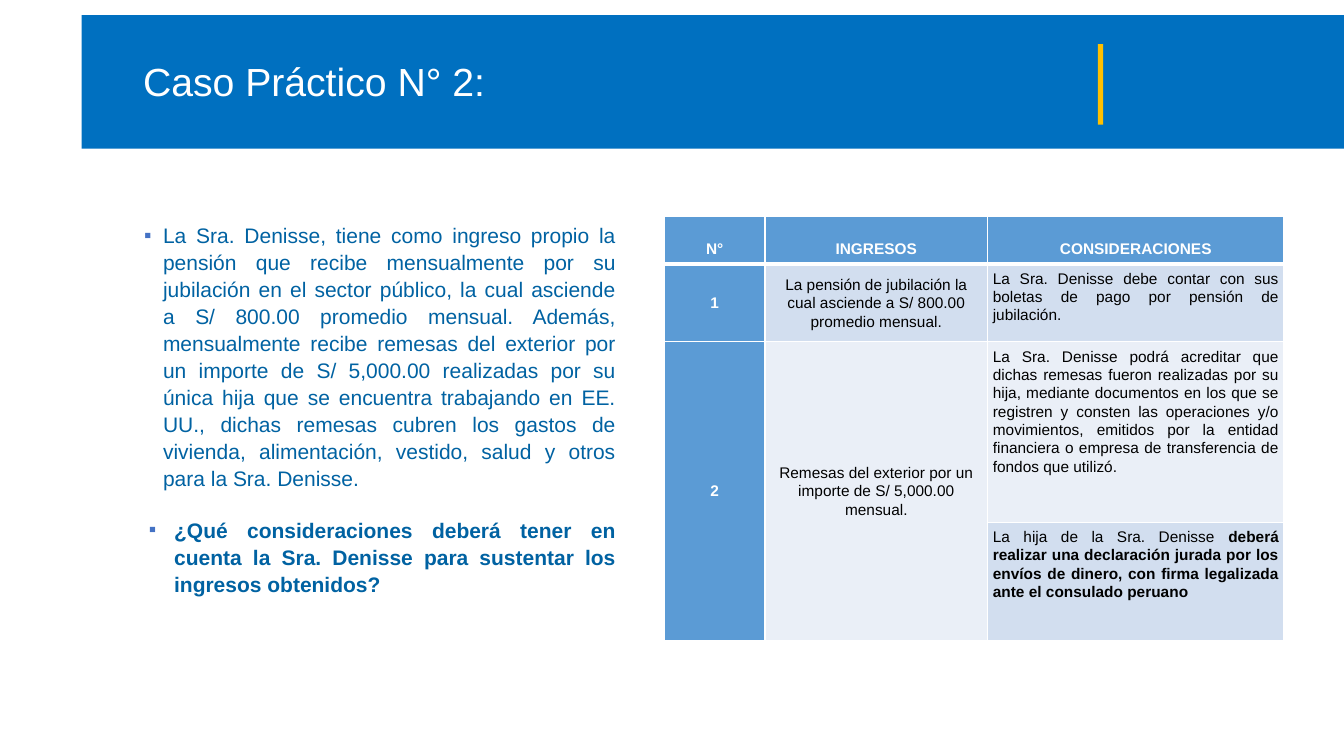
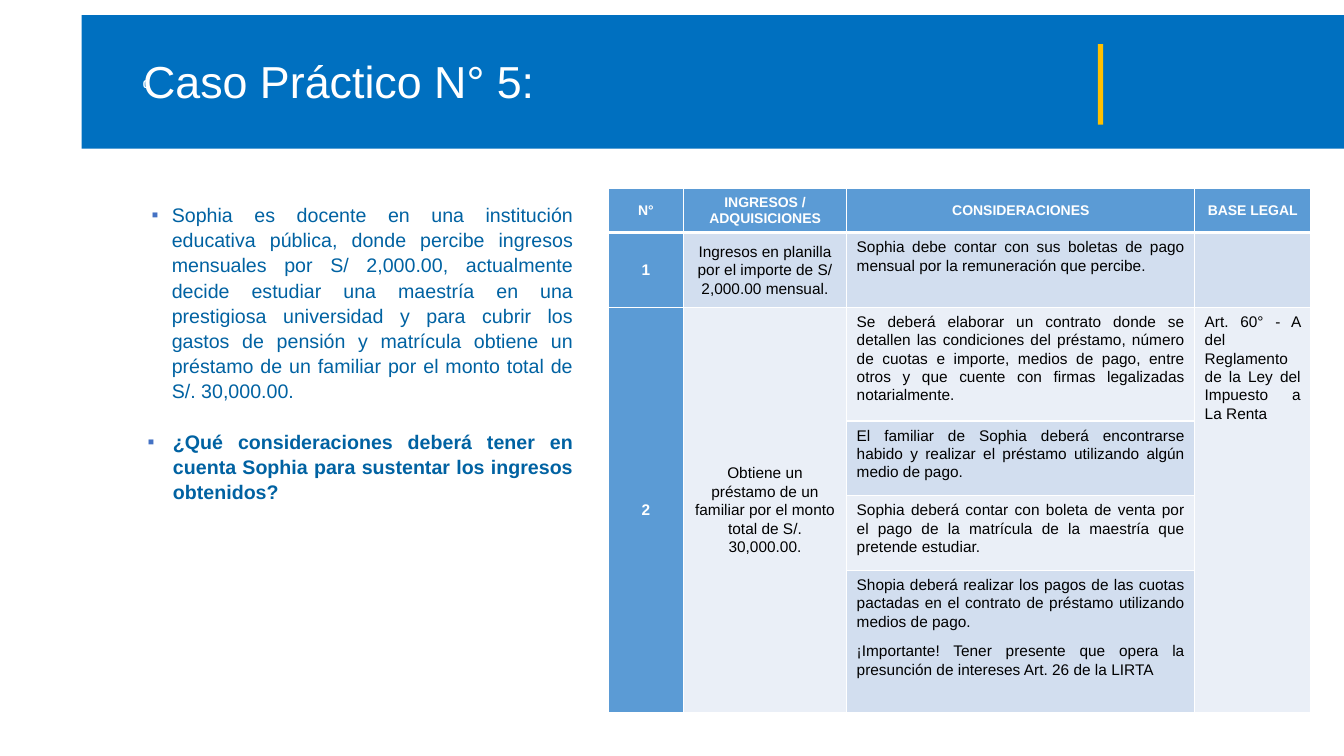
from lxml import etree
from pptx import Presentation
from pptx.dml.color import RGBColor
from pptx.enum.shapes import MSO_SHAPE
from pptx.enum.text import MSO_ANCHOR, PP_ALIGN
from pptx.oxml.ns import qn
from pptx.util import Cm, Pt

RECTANGLE = MSO_SHAPE.RECTANGLE
MIDDLE, TOP = MSO_ANCHOR.MIDDLE, MSO_ANCHOR.TOP
LEFT, CENTER, JUSTIFY = PP_ALIGN.LEFT, PP_ALIGN.CENTER, PP_ALIGN.JUSTIFY

WHITE = RGBColor(0xFF, 0xFF, 0xFF)
BLACK = RGBColor(0, 0, 0)
BAND_BLUE = RGBColor(0x00, 0x70, 0xC0)
ACCENT_YELLOW = RGBColor(0xFF, 0xC0, 0x00)
BODY_BLUE = RGBColor(0x00, 0x62, 0xA2)
BULLET_BLUE = RGBColor(0x44, 0x72, 0xC4)
HEADER_BLUE = RGBColor(0x5B, 0x9B, 0xD5)
ROW_FILLS = (RGBColor(0xEA, 0xEF, 0xF7), RGBColor(0xD2, 0xDE, 0xEF))

FONT = "Arial"
SLIDE_WIDTH, SLIDE_HEIGHT = Cm(33.87), Cm(19.05)
TITLE_BOX = (Cm(3.35), Cm(0.91), Cm(15.49), Cm(2.41))
LINE_SPACING = 1.07


def format_run(run, size, color, bold=False):
    run.font.name = FONT
    run.font.size = Pt(size)
    run.font.bold = bold
    run.font.color.rgb = color


def add_to_layout(layout, slide, box, color):
    """Draw a plain rectangle and move it behind the layout's placeholders."""
    shape = slide.shapes.add_shape(RECTANGLE, *box)
    shape.shadow.inherit = False
    shape.fill.solid()
    shape.fill.fore_color.rgb = color
    shape.line.fill.background()
    tree = layout.shapes.element
    tree.insert(len(tree) - len(layout.placeholders), shape.element)


def add_band(layout, slide):
    left, top = Cm(2.06), Cm(0.38)
    add_to_layout(layout, slide, (left, top, SLIDE_WIDTH - left, Cm(3.37)), BAND_BLUE)
    add_to_layout(layout, slide,
                  (left + Cm(25.61), top + Cm(0.73), Cm(0.13), Cm(2.03)), ACCENT_YELLOW)


def set_title(slide, text, size):
    title = slide.shapes.title
    title.left, title.top, title.width, title.height = TITLE_BOX
    frame = title.text_frame
    frame.text = text
    frame.vertical_anchor = MIDDLE
    paragraph = frame.paragraphs[0]
    paragraph.alignment = LEFT
    paragraph.line_spacing = 0.9
    format_run(paragraph.runs[0], size, WHITE)


def add_small_mark(slide, text):
    box = slide.shapes.add_textbox(*TITLE_BOX)
    frame = box.text_frame
    frame.word_wrap = True
    frame.vertical_anchor = MIDDLE
    frame.text = text
    format_run(frame.paragraphs[0].runs[0], 8, WHITE, True)


def add_bullet(paragraph, margin, hanging):
    properties = paragraph._p.get_or_add_pPr()
    properties.set("marL", str(margin))
    properties.set("indent", str(-hanging))
    color = etree.SubElement(properties, qn("a:buClr"))
    etree.SubElement(color, qn("a:srgbClr"), val=str(BULLET_BLUE))
    etree.SubElement(properties, qn("a:buFont"), typeface=FONT)
    etree.SubElement(properties, qn("a:buChar"), char="▪")


def add_case(slide, box, size, story, question, story_indent):
    """Add the case text and its bold question as two bulleted paragraphs."""
    frame = slide.shapes.add_textbox(*box).text_frame
    frame.word_wrap = True
    frame.text = f"{story}\n{question}"
    indents = (story_indent, (Cm(1.27), Cm(0.64)))
    for index, paragraph in enumerate(frame.paragraphs):
        add_bullet(paragraph, *indents[index])
        paragraph.alignment = JUSTIFY
        paragraph.line_spacing = LINE_SPACING
        paragraph.space_before = Pt(10 * index)
        paragraph.space_after = Pt(8)
        format_run(paragraph.runs[0], size, BODY_BLUE, bold=index == 1)


def set_borders(cell, row):
    """Draw white cell borders, heavier between the header and the first row."""
    properties = cell._tc.get_or_add_tcPr()
    widths = {"lnL": 1, "lnR": 1, "lnT": 3 if row == 1 else 1, "lnB": 3 if row == 0 else 1}
    for side, width in widths.items():
        line = etree.SubElement(properties, qn(f"a:{side}"), w=str(Pt(width)))
        fill = etree.SubElement(line, qn("a:solidFill"))
        etree.SubElement(fill, qn("a:srgbClr"), val=str(WHITE))


def fill_cell(cell, text, row, column, header_size, header_spacing):
    """Write the text, where ** marks the start and end of bold words."""
    is_header = row == 0 or column == 0
    is_centered = row == 0 or column < 2
    cell.fill.solid()
    cell.fill.fore_color.rgb = HEADER_BLUE if is_header else ROW_FILLS[row % 2]
    cell.vertical_anchor = MIDDLE if is_centered else TOP
    frame = cell.text_frame
    frame.text = text.replace("**", "")
    for paragraph, line in zip(frame.paragraphs, text.split("\n")):
        paragraph.alignment = CENTER if is_centered else JUSTIFY
        paragraph.line_spacing = LINE_SPACING if row else header_spacing
        paragraph.space_after = Pt(8)
        pieces = line.split("**")
        if len(pieces) > 1:
            paragraph.text = pieces[0]
            for piece in filter(None, pieces[1:]):
                paragraph.add_run().text = piece
        for index, run in enumerate(paragraph.runs):
            format_run(run, 11 if row else header_size, WHITE if is_header else BLACK,
                       is_header or index % 2 == 1)


def add_considerations(slide, left, top, widths, heights, rows, side_margin,
                       header_size, header_spacing):
    """Add the table; a None entry joins its cell to the one above."""
    table = slide.shapes.add_table(len(rows), len(widths), left, top,
                                   Cm(sum(widths)), Cm(sum(heights))).table
    table.first_row = table.horz_banding = False
    for column, width in zip(table.columns, widths):
        column.width = Cm(width)
    for row, height in zip(table.rows, heights):
        row.height = Cm(height)
    for row, texts in enumerate(rows):
        for column, text in enumerate(texts):
            cell = table.cell(row, column)
            cell.margin_left = cell.margin_right = side_margin
            cell.margin_top = cell.margin_bottom = Cm(0.13)
            set_borders(cell, row)
            if text is not None:
                fill_cell(cell, text, row, column, header_size, header_spacing)
    for column in range(len(widths)):
        if rows[-1][column] is None:
            table.cell(2, column).merge(table.cell(len(rows) - 1, column))


def build_pension_case(slide):
    set_title(slide, "Caso Práctico N° 2:", 28)
    add_case(
        slide, (Cm(2.87), Cm(5.44), Cm(12.9), Cm(11.43)), 15,
        "La Sra. Denisse, tiene como ingreso propio la pensión que recibe mensualmente por su "
        "jubilación en el sector público, la cual asciende a S/ 800.00 promedio mensual. Además, "
        "mensualmente recibe remesas del exterior por un importe de S/ 5,000.00 realizadas por su "
        "única hija que se encuentra trabajando en EE. UU., dichas remesas cubren los gastos de "
        "vivienda, alimentación, vestido, salud y otros para la Sra. Denisse.",
        "¿Qué consideraciones deberá tener en cuenta la Sra. Denisse para sustentar los "
        "ingresos obtenidos?",
        (Cm(0.99), Cm(0.48)))
    rows = [
        ("N°", "INGRESOS", "CONSIDERACIONES"),
        ("1", "La pensión de jubilación la cual asciende a S/ 800.00 promedio mensual.",
         "La Sra. Denisse debe contar con sus boletas de pago por pensión de jubilación."),
        ("2", "Remesas del exterior por un importe de S/ 5,000.00 mensual.",
         "La Sra. Denisse podrá acreditar que dichas remesas fueron realizadas por su hija, "
         "mediante documentos en los que se registren y consten las operaciones y/o movimientos, "
         "emitidos por la entidad financiera o empresa de transferencia de fondos que utilizó."),
        (None, None,
         "La hija de la Sra. Denisse **deberá realizar una declaración jurada por los envíos de "
         "dinero, con firma legalizada ante el consulado peruano**"),
    ]
    add_considerations(slide, Cm(16.74), Cm(5.46), (2.54, 5.61, 7.47),
                       (1.12, 1.96, 4.55, 2.97), rows, Cm(0.13), 11, 2.0)


def build_loan_case(slide):
    add_small_mark(slide, "0")
    set_title(slide, "Caso Práctico N° 5:", 32)
    add_case(
        slide, (Cm(2.84), Cm(4.95), Cm(11.86), Cm(11.73)), 14,
        "Sophia es docente en una institución educativa pública, donde percibe ingresos mensuales "
        "por S/ 2,000.00, actualmente decide estudiar una maestría en una prestigiosa universidad "
        "y para cubrir los gastos de pensión y matrícula obtiene un préstamo de un familiar por "
        "el monto total de S/. 30,000.00.",
        "¿Qué consideraciones deberá tener en cuenta Sophia para sustentar los ingresos obtenidos?",
        (Cm(1.24), Cm(0.51)))
    rows = [
        ("N°", "INGRESOS / ADQUISICIONES", "CONSIDERACIONES", "BASE LEGAL"),
        ("1", "Ingresos en planilla por el importe de S/ 2,000.00 mensual.",
         "Sophia debe contar con sus boletas de pago mensual por la remuneración que percibe.", ""),
        ("2", "Obtiene un préstamo de un familiar por el monto total de S/. 30,000.00.",
         "Se deberá elaborar un contrato donde se detallen las condiciones del préstamo, número "
         "de cuotas e importe, medios de pago, entre otros y que cuente con firmas legalizadas "
         "notarialmente.",
         "Art. 60° - A del Reglamento de la Ley del Impuesto a La Renta"),
        (None, None,
         "El familiar de Sophia deberá encontrarse habido y realizar el préstamo utilizando "
         "algún medio de pago.", None),
        (None, None,
         "Sophia deberá contar con boleta de venta por el pago de la matrícula de la maestría "
         "que pretende estudiar.", None),
        (None, None,
         "Shopia deberá realizar los pagos de las cuotas pactadas en el contrato de préstamo "
         "utilizando medios de pago.\n"
         "¡Importante! Tener presente que opera la presunción de intereses Art. 26 de la LIRTA",
         None),
    ]
    add_considerations(slide, Cm(15.34), Cm(4.75), (1.88, 4.12, 8.77, 2.92),
                       (1.04, 1.88, 2.87, 1.88, 1.88, 3.58), rows, Cm(0.25), 10, 1.0)


def main():
    presentation = Presentation()
    presentation.slide_width, presentation.slide_height = SLIDE_WIDTH, SLIDE_HEIGHT
    layout = presentation.slide_layouts[5]
    pension_slide = presentation.slides.add_slide(layout)
    add_band(layout, pension_slide)
    build_pension_case(pension_slide)
    build_loan_case(presentation.slides.add_slide(layout))
    presentation.save("out.pptx")


if __name__ == "__main__":
    main()
